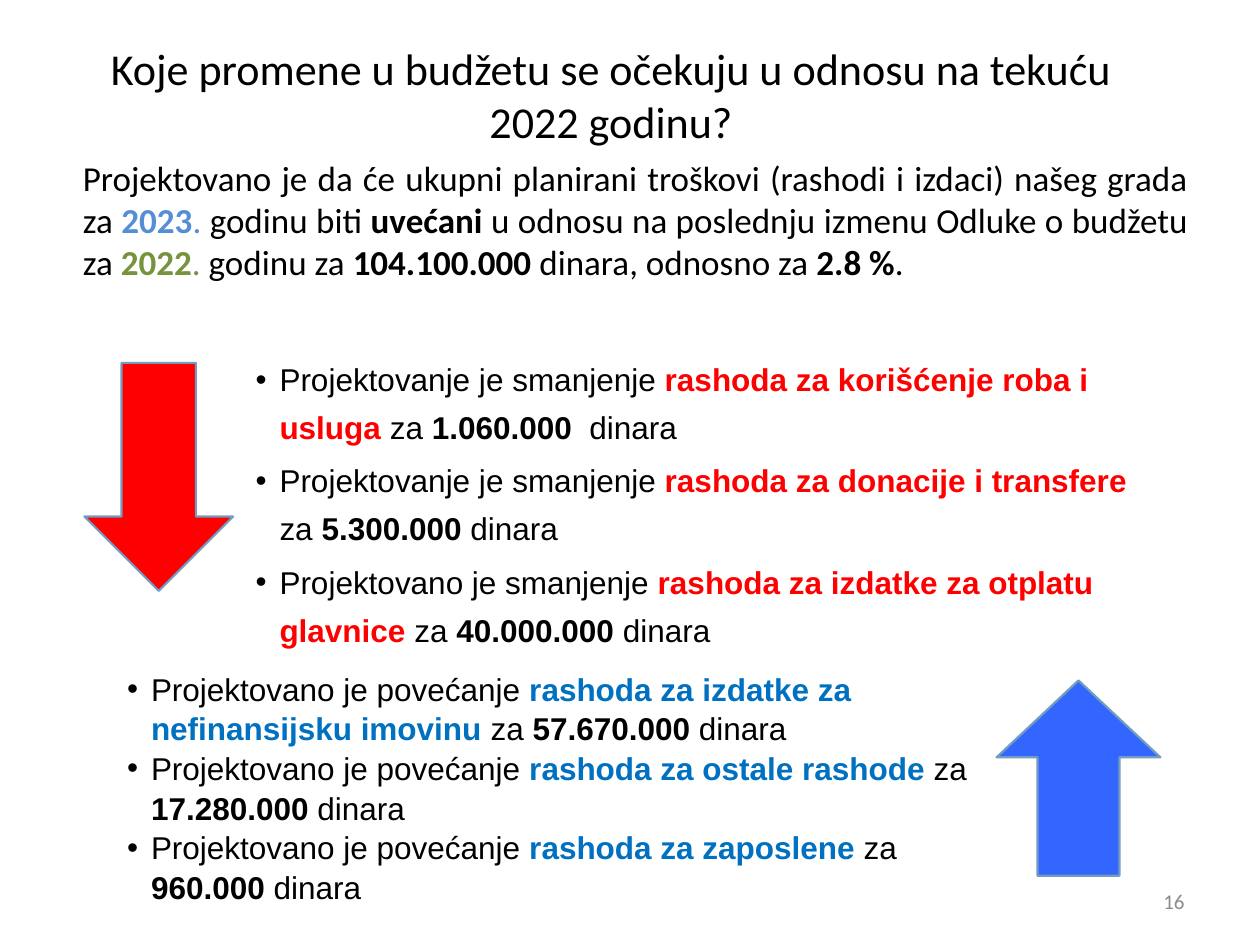
from dataclasses import dataclass

from lxml import etree
from pptx import Presentation
from pptx import util as u
from pptx.dml.color import RGBColor
from pptx.enum import shapes, text
from pptx.oxml.ns import qn


@dataclass(frozen=True)
class Theme:
    ink: str = "000000"
    grey: str = "8C8C8C"
    next_year: str = "558ED5"
    this_year: str = "77933C"
    cut: str = "FF0000"
    growth: str = "0070C0"
    growth_arrow: str = "3366FF"
    outline: str = "739CC3"
    heading_font: str = "Calibri"
    list_font: str = "Arial"
    title_size: float = 25.2
    intro_size: float = 20
    list_size: float = 18
    number_size: float = 12
    outline_width: float = 1.25


class BudgetSlide:
    def __init__(self, deck, theme):
        self.theme = theme
        self.slide = deck.slides.add_slide(deck.slide_layouts[6])

    def text_block(self, box, paragraphs, size, font, color=None, anchor="TOP",
                   bullet=False, indent=0, **paragraph_format):
        frame = self.slide.shapes.add_textbox(*map(u.Inches, box)).text_frame
        frame.word_wrap = True
        frame.vertical_anchor = getattr(text.MSO_ANCHOR, anchor)
        for index, pieces in enumerate(paragraphs):
            paragraph = frame.paragraphs[0] if index == 0 else frame.add_paragraph()
            for name, value in paragraph_format.items():
                setattr(paragraph, name, value)
            self.indent(paragraph, indent, bullet)
            for wording, bold, tint in pieces:
                self.add_wording(paragraph, wording, {
                    "size": u.Pt(size), "name": font, "bold": bold,
                }, tint or color or self.theme.ink)

    def indent(self, paragraph, margin, bullet):
        properties = paragraph._p.get_or_add_pPr()
        properties.set("marL", str(u.Inches(margin)))
        properties.set("indent", str(-u.Inches(margin) if bullet else 0))
        if bullet:
            etree.SubElement(properties, qn("a:buFont"), typeface=self.theme.list_font)
            etree.SubElement(properties, qn("a:buChar"), char="•")

    def add_wording(self, paragraph, wording, font_format, color):
        for index, line in enumerate(wording.split("\n")):
            if index:
                paragraph.add_line_break()
            if line:
                run = paragraph.add_run()
                run.text = line
                for name, value in font_format.items():
                    setattr(run.font, name, value)
                run.font.color.rgb = RGBColor.from_string(color)

    def arrow(self, kind, box, fill, head):
        arrow = self.slide.shapes.add_shape(kind, *map(u.Inches, box))
        arrow.shadow.inherit = False
        arrow.adjustments[0], arrow.adjustments[1] = 0.5, head
        arrow.fill.solid()
        arrow.fill.fore_color.rgb = RGBColor.from_string(fill)
        arrow.line.color.rgb = RGBColor.from_string(self.theme.outline)
        arrow.line.width = u.Pt(self.theme.outline_width)


def plain(wording, tint=None):
    return wording, False, tint


def strong(wording, tint=None):
    return wording, True, tint


def change(opening, category, amount, tint, closing=" dinara"):
    return [plain(opening), strong(category, tint), plain("za "),
            strong(amount), plain(closing)]


def main():
    deck = Presentation()
    deck.slide_width, deck.slide_height = u.Inches(10), u.Inches(7.5)
    theme = Theme()
    budget = BudgetSlide(deck, theme)

    budget.text_block(
        (0.35, 0.29, 9, 0.91),
        [[plain("Koje promene u budžetu se očekuju u odnosu na tekuću\n2022 godinu?")]],
        theme.title_size, theme.heading_font, anchor="MIDDLE",
        alignment=text.PP_ALIGN.CENTER)

    intro = [
        plain("Projektovano je da će ukupni planirani troškovi (rashodi i izdaci) našeg grada za "),
        strong("2023", theme.next_year), plain(". ", theme.next_year),
        plain("godinu biti "), strong("uvećani "),
        plain("u odnosu na poslednju izmenu Odluke o budžetu za "),
        strong("2022", theme.this_year), plain(". ", theme.this_year),
        plain("godinu za "), strong("104.100.000 "),
        plain("dinara, odnosno za "), strong("2.8 %"), plain("."),
    ]
    budget.text_block((0.53, 1.19, 9, 1.24), [intro], theme.intro_size,
                      theme.heading_font, indent=0.03,
                      alignment=text.PP_ALIGN.JUSTIFY)

    cuts = [
        change("Projektovanje je smanjenje ", "rashoda za korišćenje roba i usluga ",
               "1.060.000", theme.cut, "  dinara"),
        change("Projektovanje je smanjenje ", "rashoda za donacije i transfere \n",
               "5.300.000", theme.cut),
        change("Projektovano je smanjenje ", "rashoda za izdatke za otplatu glavnice ",
               "40.000.000", theme.cut),
    ]
    budget.text_block((1.93, 2.73, 7.32, 2.36), cuts, theme.list_size,
                      theme.list_font, bullet=True, indent=0.19,
                      line_spacing=1.27, space_before=u.Pt(3))

    increases = [
        change("Projektovano je povećanje ", category, amount, theme.growth)
        for category, amount in (
            ("rashoda za izdatke za nefinansijsku imovinu ", "57.670.000"),
            ("rashoda za ostale rashode ", "17.280.000"),
            ("rashoda za zaposlene ", "960.000"),
        )
    ]
    budget.text_block((0.91, 5.25, 7.09, 1.81), increases, theme.list_size,
                      theme.list_font, bullet=True, indent=0.19, line_spacing=1.05)

    budget.arrow(shapes.MSO_SHAPE.DOWN_ARROW, (0.67, 2.88, 1.18, 1.81), theme.cut, 0.5)
    budget.arrow(shapes.MSO_SHAPE.UP_ARROW, (7.91, 5.4, 1.3, 1.55),
                 theme.growth_arrow, 0.47)

    budget.text_block((7.17, 6.95, 2.33, 0.4), [[plain("16")]], theme.number_size,
                      theme.heading_font, theme.grey, "MIDDLE",
                      alignment=text.PP_ALIGN.RIGHT)

    deck.save("out.pptx")


if __name__ == "__main__":
    main()
